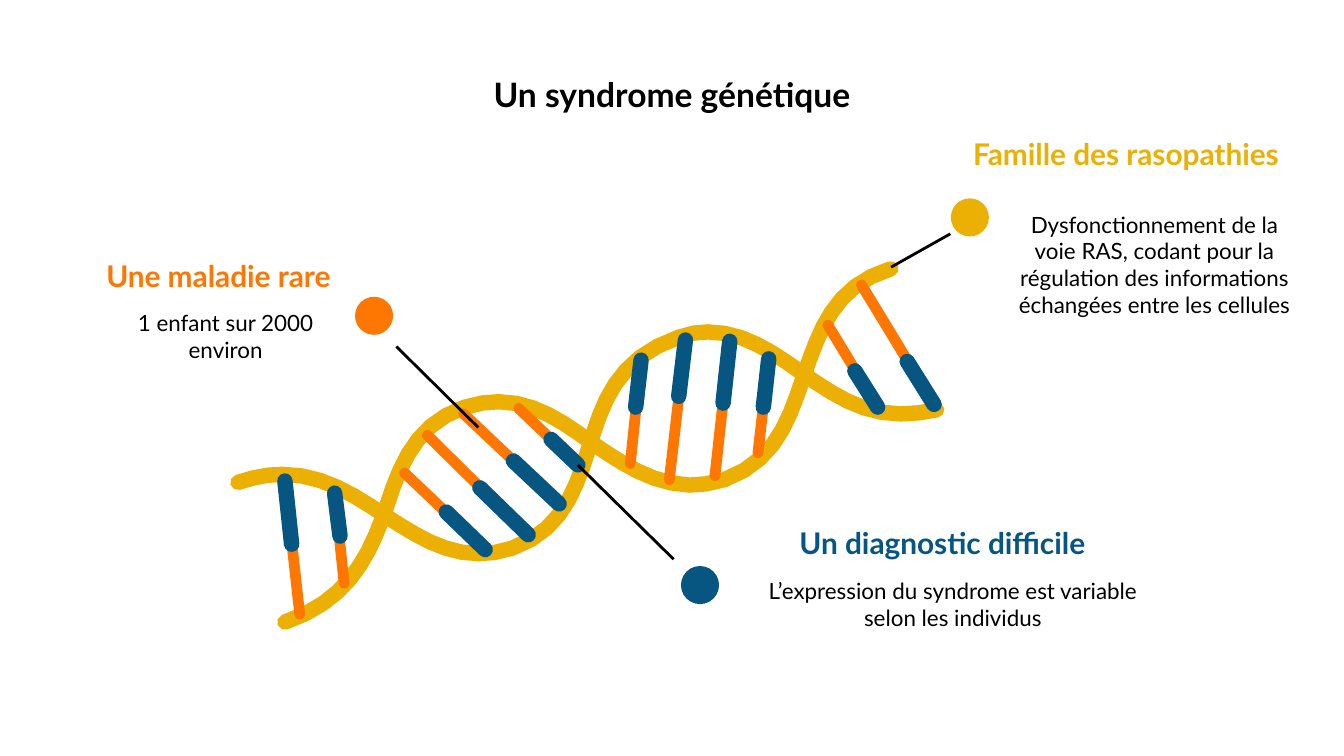
"""Build a slide presenting a genetic syndrome around a DNA double helix."""
import math

import pptx
import pptx.dml.color
import pptx.enum.shapes
import pptx.enum.text
import pptx.util
from lxml import etree

Cm = pptx.util.Cm
GRID = Cm(2.54) / 100
ORANGE, YELLOW, BLUE, BLACK = "FE7702", "ECB004", "075681", "000000"
STRAND_WIDTH, ORANGE_WIDTH, BLUE_WIDTH = 11.5, 8, 11.5
STEP_LENGTH = 14
CAP_STEPS = 4


def rgb(color):
    """Turn a hex string into a colour."""
    return pptx.dml.color.RGBColor.from_string(color)


def fill_plain(shape, color):
    """Give a shape a flat fill without outline or shadow."""
    shape.shadow.inherit = False
    shape.fill.solid()
    shape.fill.fore_color.rgb = rgb(color)
    shape.line.fill.background()


presentation = pptx.Presentation()
presentation.slide_width = Cm(25.4)
presentation.slide_height = Cm(14.29)
slide = presentation.slides.add_slide(presentation.slide_layouts[5])

center = pptx.enum.text.PP_ALIGN.CENTER
left_align = pptx.enum.text.PP_ALIGN.LEFT
right_align = pptx.enum.text.PP_ALIGN.RIGHT
middle = pptx.enum.text.MSO_ANCHOR.MIDDLE
top_anchor = pptx.enum.text.MSO_ANCHOR.TOP

texts = [
    ("Un syndrome génétique", (1.27, 1.14, 22.86, 0.94), 18, BLACK, center),
    ("L’expression du syndrome est variable selon les individus",
     (13.82, 10.64, 8.38, 1.57), 12, BLACK, center),
    ("Une maladie rare", (0.51, 4.83, 5.99, 0.76), 16, ORANGE, right_align),
    ("1 enfant sur 2000 environ", (2.03, 5.56, 4.47, 1.57), 12, BLACK, center),
    ("Famille des rasopathies", (18.14, 2.54, 7.67, 0.71), 16, YELLOW, left_align),
    ("Dysfonctionnement de la voie RAS, codant pour la régulation des informations "
     "échangées entre les cellules", (18.9, 3.68, 5.84, 2.64), 12, BLACK, center),
    ("Un diagnostic difficile", (14.86, 9.91, 7.34, 0.71), 16, BLUE, left_align),
]
for text, box, size, color, alignment in texts:
    left, top, width, height = map(Cm, box)
    if size == 18:
        shape = slide.shapes.title
        shape.left, shape.top, shape.width, shape.height = left, top, width, height
    else:
        shape = slide.shapes.add_textbox(left, top, width, height)
    frame = shape.text_frame
    frame.word_wrap = True
    frame.auto_size = pptx.enum.text.MSO_AUTO_SIZE.NONE
    frame.vertical_anchor = top_anchor if size == 18 else middle
    frame.margin_left = frame.margin_right = Cm(0.25)
    frame.margin_top = frame.margin_bottom = Cm(0.25)
    frame.text = text
    paragraph = frame.paragraphs[0]
    paragraph.alignment = alignment
    paragraph.font.name = "Lato"
    paragraph.font.size = pptx.util.Pt(size)
    paragraph.font.bold = size > 12
    paragraph.font.color.rgb = rgb(color)

for left, top, color in [(6.71, 5.61, ORANGE), (17.97, 3.75, YELLOW), (12.87, 10.7, BLUE)]:
    dot = slide.shapes.add_shape(
        pptx.enum.shapes.MSO_SHAPE.OVAL, Cm(left), Cm(top), Cm(0.72), Cm(0.72))
    fill_plain(dot, color)

strands = [
    [(663, 200), (620, 213), (610, 246), (598, 280), (587, 313), (577, 343), (539, 357),
     (529, 360), (521, 361), (513, 361), (485, 360), (463, 345), (441, 330),
     (419, 314), (398, 299), (371, 299), (364, 299), (355, 300), (346, 303),
     (310, 315), (298, 345), (288, 376), (276, 410), (262, 446), (212, 463)],
    [(177, 359), (189, 355), (199, 353), (210, 353), (240, 353), (263, 368), (287, 384),
     (309, 398), (330, 412), (356, 412), (364, 412), (372, 411), (381, 408),
     (418, 395), (428, 365), (438, 334), (448, 301), (458, 267), (505, 251),
     (513, 248), (520, 247), (527, 247), (553, 247), (575, 262), (596, 277),
     (619, 293), (641, 308), (670, 308), (679, 308), (688, 307), (697, 305)],
]
for controls in strands:
    curve = [controls[0]]
    for first in range(0, len(controls) - 1, 3):
        segment = controls[first:first + 4]
        steps = math.ceil(math.dist(segment[0], segment[3]) / STEP_LENGTH)
        for step in range(1, steps + 1):
            t = step / steps
            weights = [math.comb(3, k) * t ** k * (1 - t) ** (3 - k) for k in range(4)]
            curve.append(tuple(
                sum(weight * point[axis] for weight, point in zip(weights, segment))
                for axis in range(2)))
    outline = []
    for side in (curve, curve[::-1]):
        for index, (x, y) in enumerate(side):
            before = side[max(index - 1, 0)]
            after = side[min(index + 1, len(side) - 1)]
            heading = math.atan2(after[1] - before[1], after[0] - before[0])
            turns = CAP_STEPS if index == len(side) - 1 else 1
            for turn in range(turns):
                angle = heading + math.pi / 2 - math.pi * turn / CAP_STEPS
                outline.append((
                    (x + STRAND_WIDTH / 2 * math.cos(angle)) * GRID,
                    (y + STRAND_WIDTH / 2 * math.sin(angle)) * GRID))
    builder = slide.shapes.build_freeform(*outline[0])
    builder.add_line_segments(outline[1:], close=True)
    fill_plain(builder.convert_to_shape(), YELLOW)

rungs = [
    ((301, 352), (332, 381), (361, 409)),
    ((318, 324), (357, 363), (393, 398)),
    ((345, 308), (382, 343), (416, 375)),
    ((386, 304), (410, 327), (430, 346)),
    ((469, 345), (473, 303), (477, 268)),
    ((498, 357), (505, 295), (510, 253)),
    ((532, 354), (538, 300), (543, 254)),
    ((564, 337), (568, 303), (572, 267)),
    ((256, 434), (253, 399), (249, 367)),
    ((223, 457), (217, 405), (212, 358)),
    ((616, 242), (636, 276), (653, 303)),
    ((641, 212), (675, 269), (695, 301)),
]
for orange_end, joint, blue_end in rungs:
    for start, thickness, color in [
            (orange_end, ORANGE_WIDTH, ORANGE), (joint, BLUE_WIDTH, BLUE)]:
        length = math.dist(start, blue_end) + thickness
        left = (start[0] + blue_end[0] - thickness) / 2
        top = (start[1] + blue_end[1] - length) / 2
        bar = slide.shapes.add_shape(
            pptx.enum.shapes.MSO_SHAPE.ROUNDED_RECTANGLE,
            *(round(value * GRID) for value in (left, top, thickness, length)))
        bar.adjustments[0] = 0.5
        slope = (blue_end[1] - start[1]) / (blue_end[0] - start[0])
        bar.rotation = math.degrees(math.atan(slope)) + 90
        fill_plain(bar, color)

callouts = [
    (7.49, 6.55, 9.04, 8.08),
    (10.92, 8.79, 12.73, 10.57),
    (16.84, 5.05, 17.96, 4.42),
]
for ends in callouts:
    callout = slide.shapes.add_connector(
        pptx.enum.shapes.MSO_CONNECTOR.STRAIGHT, *map(Cm, ends))
    callout.line.width = pptx.util.Pt(1.5)
    callout.line.color.rgb = rgb(BLACK)
    namespace = callout._element.nsmap["a"]
    etree.SubElement(callout._element.spPr, f"{{{namespace}}}effectLst")

presentation.save("out.pptx")
